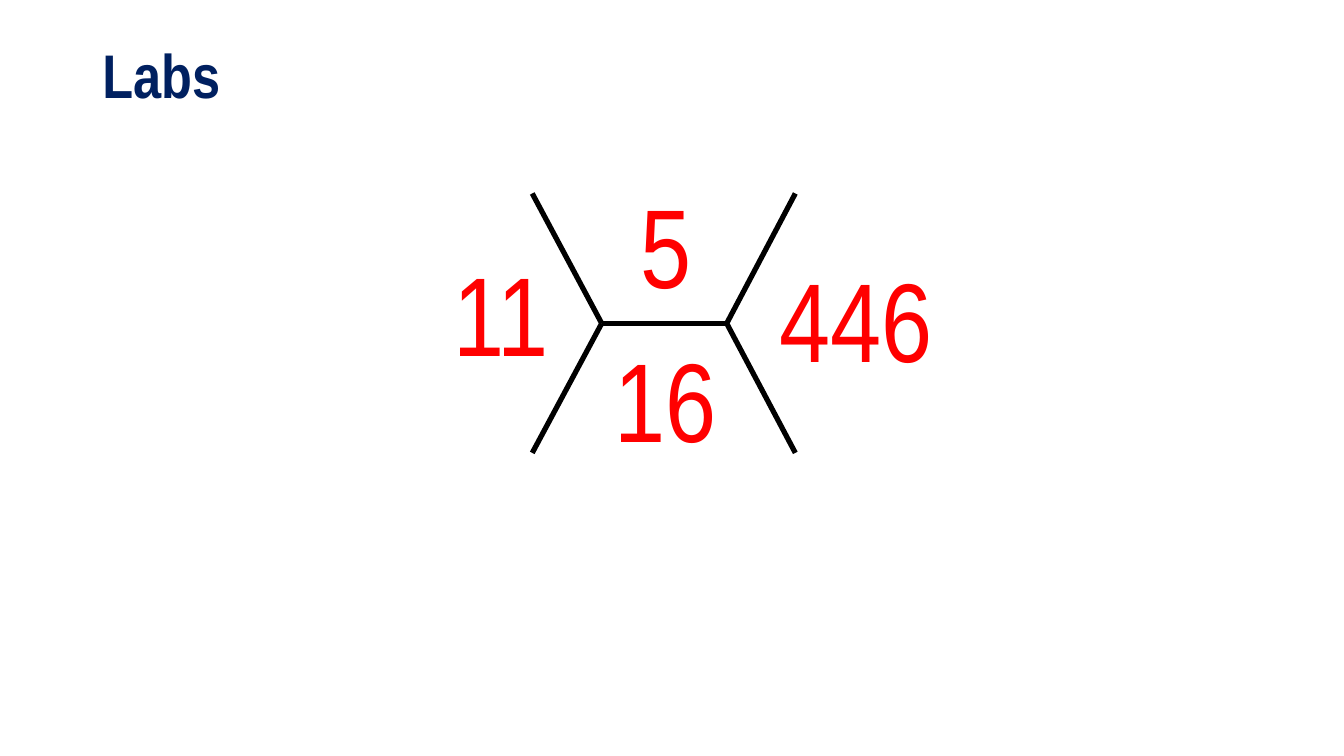
from pptx import Presentation
from pptx.dml.color import RGBColor
from pptx.enum.shapes import MSO_CONNECTOR
from pptx.enum.text import MSO_ANCHOR, PP_ALIGN
from pptx.oxml.ns import qn
from pptx.util import Pt
from lxml.etree import SubElement

NAVY = RGBColor(0x00, 0x20, 0x60)
RED = RGBColor(0xFF, 0x00, 0x00)
BLACK = RGBColor(0x00, 0x00, 0x00)
FONT = "Arial Narrow"

# Fishbone geometry
LEFT_NODE, RIGHT_NODE = 429.8, 519.1
LEFT_TIP, RIGHT_TIP = 380.2, 568.1
TOP, MIDDLE, BOTTOM = 138.2, 231, 323.5

# Lab values: text, left, top, width, alignment
LAB_VALUES = [
    ("11", 265, 171.4, 133.9, PP_ALIGN.RIGHT),
    ("16", 424.1, 232.6, 103, PP_ALIGN.CENTER),
    ("446", 549.4, 175.7, 148.3, PP_ALIGN.LEFT),
    ("5", 417.6, 122.4, 116.6, PP_ALIGN.CENTER),
]


def add_text(slide, text, left, top, width, size, color,
             alignment=PP_ALIGN.LEFT, bold=False, line_spacing=1.0):
    box = slide.shapes.add_textbox(Pt(left), Pt(top), Pt(width), Pt(104.4))
    text_frame = box.text_frame
    text_frame.word_wrap = True
    text_frame.vertical_anchor = MSO_ANCHOR.TOP
    text_frame.text = text
    paragraph = text_frame.paragraphs[0]
    paragraph.alignment = alignment
    paragraph.line_spacing = line_spacing
    font = paragraph.runs[0].font
    font.name = FONT
    font.size = Pt(size)
    font.bold = bold
    font.color.rgb = color


def add_line(slide, start_x, start_y, end_x, end_y):
    connector = slide.shapes.add_connector(
        MSO_CONNECTOR.STRAIGHT, Pt(start_x), Pt(start_y), Pt(end_x), Pt(end_y))
    connector.line.color.rgb = BLACK
    connector.line.width = Pt(3.75)
    SubElement(connector._element.spPr, qn("a:effectLst"))


def main():
    presentation = Presentation()
    presentation.slide_width = Pt(960)
    presentation.slide_height = Pt(540)
    slide = presentation.slides.add_slide(presentation.slide_layouts[6])

    # Title
    add_text(slide, "Labs", 66, 28.8, 828, 44, NAVY, bold=True, line_spacing=0.9)

    # Fishbone: spine, then a branch up and down at each end
    add_line(slide, LEFT_NODE, MIDDLE, RIGHT_NODE, MIDDLE)
    for node, tip in ((LEFT_NODE, LEFT_TIP), (RIGHT_NODE, RIGHT_TIP)):
        for end in (TOP, BOTTOM):
            add_line(slide, node, MIDDLE, tip, end)

    # Lab values around the spine
    for text, left, top, width, alignment in LAB_VALUES:
        add_text(slide, text, left, top, width, 80, RED, alignment)

    presentation.save("out.pptx")


if __name__ == "__main__":
    main()
